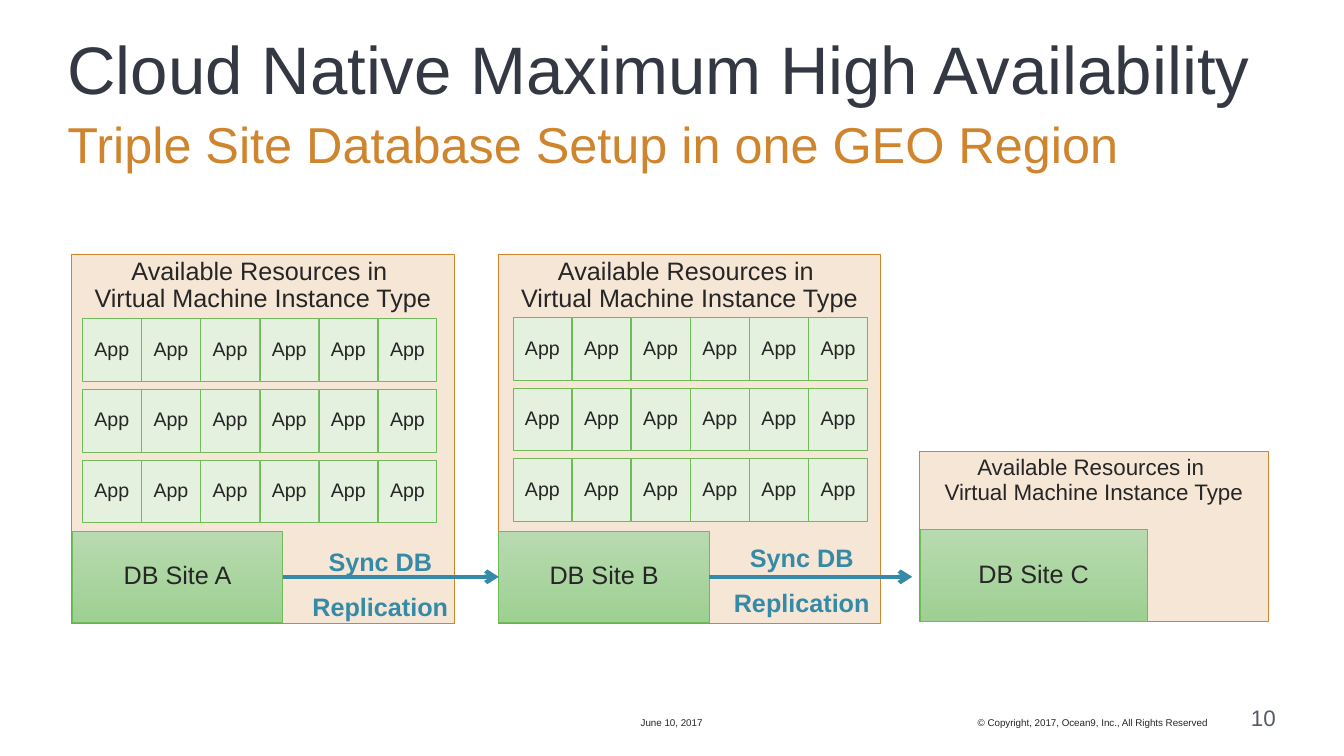
from lxml import etree
from pptx import Presentation
from pptx.dml.color import RGBColor
from pptx.enum import shapes, text
from pptx.oxml.ns import qn
from pptx.util import Cm, Pt

TITLE = "Cloud Native Maximum High Availability"
SUBTITLE = "Triple Site Database Setup in one GEO Region"
RESOURCES = "Available Resources in \nVirtual Machine Instance Type"
REPLICATION = ["Sync DB", "Replication"]
APP = "App"
APP_ROWS, APP_COLUMNS = 3, 6

# Lengths in cm: (left, top, width, height); apps is the grid's top left corner
SITES = [
    {"name": "DB Site A", "box": (1.8, 6.4, 9.65, 9.3), "size": "label",
     "database": (1.82, 13.38, 5.31, 2.31), "apps": (2.08, 8.03),
     "replication": (7.82, 13.38, 3.53, 2.34)},
    {"name": "DB Site B", "box": (12.55, 6.4, 9.65, 9.3), "size": "label",
     "database": (12.57, 13.38, 5.31, 2.31), "apps": (12.93, 8),
     "replication": (18.44, 13.28, 3.53, 2.34)},
    {"name": "DB Site C", "box": (23.16, 11.38, 8.81, 4.29), "size": "number",
     "database": (23.19, 13.34, 5.72, 2.31)},
]
APP_SIZE = (1.48, 1.58)
APP_PITCH = (1.49, 1.78)
LAST_ARROW_END = 22.99

ALIGN, ANCHOR = text.PP_ALIGN, text.MSO_ANCHOR
FOOTERS = [
    ("© Copyright, 2017, Ocean9, Inc., All Rights Reserved",
     (19.25, 17.78, 11.18, 0.58), "footer", "ink", ALIGN.RIGHT),
    ("June 10, 2017", (15.54, 17.78, 2.77, 0.58), "footer", "ink", ALIGN.CENTER),
    ("10", (30.68, 17.78, 1.47, 0.64), "number", "muted", ALIGN.RIGHT),
]

THEME = {
    "font": "Arial",
    "colors": {"title": "343842", "accent": "CF842E", "ink": "262626",
               "muted": "555B6B", "site": "F6E6D5", "app": "E3F1DE",
               "green": "71BA5B", "db_top": "B8DAB0", "db_bottom": "9ED092",
               "sync": "348AA7"},
    "sizes": {"title": 48, "subtitle": 36, "label": 18, "number": 16,
              "app": 14, "footer": 7},
}
NO_INSETS = dict.fromkeys(
    ["margin_left", "margin_top", "margin_right", "margin_bottom"], 0)


def color(name):
    return RGBColor.from_string(THEME["colors"][name])


def apply(target, formats):
    for attribute, value in formats.items():
        setattr(target, attribute, value)


def place(target, box):
    apply(target, dict(zip(("left", "top", "width", "height"), map(Cm, box))))


def write(frame, lines, size, ink, align=ALIGN.CENTER, spacing=0.9,
          bold=False, **frame_formats):
    apply(frame, {"word_wrap": True, "auto_size": text.MSO_AUTO_SIZE.NONE,
                  **frame_formats})
    for index, line in enumerate(lines):
        paragraph = frame.paragraphs[0] if index == 0 else frame.add_paragraph()
        paragraph.text = line
        apply(paragraph, {"alignment": align, "line_spacing": spacing,
                          "space_before": Pt(0)})
        for run in paragraph.runs:
            apply(run.font, {"name": THEME["font"], "bold": bold,
                             "size": Pt(THEME["sizes"][size])})
            run.font.color.rgb = color(ink)


def add_box(slide, box, label, size, fills, outline, anchor=ANCHOR.MIDDLE):
    """Add a labelled rectangle; two fills make a top-to-bottom gradient."""
    box_shape = slide.shapes.add_shape(shapes.MSO_SHAPE.RECTANGLE, *map(Cm, box))
    box_shape.shadow.inherit = False
    if len(fills) == 1:
        box_shape.fill.solid()
        box_shape.fill.fore_color.rgb = color(fills[0])
    else:
        box_shape.fill.gradient()
        box_shape.fill.gradient_angle = 270
        for stop, fill in zip(box_shape.fill.gradient_stops, fills):
            stop.color.rgb = color(fill)
    box_shape.line.color.rgb = color(outline)
    box_shape.line.width = Pt(0.5)
    write(box_shape.text_frame, [label], size, "ink", vertical_anchor=anchor)
    return box_shape


def add_text(slide, box, lines, size, ink, **formats):
    frame = slide.shapes.add_textbox(*map(Cm, box)).text_frame
    write(frame, lines, size, ink, **{**NO_INSETS, "word_wrap": False, **formats})


def add_apps(slide, left, top):
    for row in range(APP_ROWS):
        for column in range(APP_COLUMNS):
            corner = (left + column * APP_PITCH[0], top + row * APP_PITCH[1])
            add_box(slide, corner + APP_SIZE, APP, "app", ["app"], "green")


def add_arrow(slide, source, target=None):
    """Join two databases, or stop short of the last site without a target."""
    middle = source.top + source.height // 2
    arrow = slide.shapes.add_connector(
        shapes.MSO_CONNECTOR.STRAIGHT, source.left + source.width, middle,
        Cm(LAST_ARROW_END), middle)
    arrow.begin_connect(source, 3)
    if target is not None:
        arrow.end_connect(target, 1)
    arrow.line.color.rgb = color("sync")
    arrow.line.width = Pt(3)
    etree.SubElement(arrow.line._get_or_add_ln(), qn("a:tailEnd"), type="arrow")
    etree.SubElement(arrow._element.spPr, qn("a:effectLst"))


def add_headings(slide):
    title, subtitle = slide.shapes.title, slide.placeholders[1]
    place(title, (1.7, 0.85, 30.48, 1.9))
    place(subtitle, (1.7, 2.97, 30.48, 1.48))
    properties = subtitle.text_frame.paragraphs[0]._p.get_or_add_pPr()
    apply_indent = {"marL": "0", "indent": "0"}
    for attribute, value in apply_indent.items():
        properties.set(attribute, value)
    etree.SubElement(properties, qn("a:buNone"))
    write(title.text_frame, [TITLE], "title", "title", ALIGN.LEFT,
          vertical_anchor=ANCHOR.BOTTOM, **NO_INSETS)
    write(subtitle.text_frame, [SUBTITLE], "subtitle", "accent", ALIGN.LEFT,
          vertical_anchor=ANCHOR.MIDDLE, **NO_INSETS)


def main():
    deck = Presentation()
    apply(deck, {"slide_width": Cm(33.87), "slide_height": Cm(19.05)})
    slide = deck.slides.add_slide(deck.slide_layouts[1])
    add_headings(slide)

    databases = []
    for site in SITES:
        add_box(slide, site["box"], RESOURCES, site["size"], ["site"], "accent",
                ANCHOR.TOP)
        databases.append(add_box(slide, site["database"], site["name"], "label",
                                 ["db_top", "db_bottom"], "green"))
        if "apps" in site:
            add_apps(slide, *site["apps"])

    site_a, site_b, _ = databases
    add_arrow(slide, site_a, site_b)
    add_arrow(slide, site_b)
    for site in SITES:
        if "replication" in site:
            add_text(slide, site["replication"], REPLICATION, "label", "sync",
                     spacing=1.5, bold=True)

    for label, box, size, ink, align in FOOTERS:
        add_text(slide, box, [label], size, ink, align=align,
                 vertical_anchor=ANCHOR.BOTTOM)
    deck.save("out.pptx")


if __name__ == "__main__":
    main()
